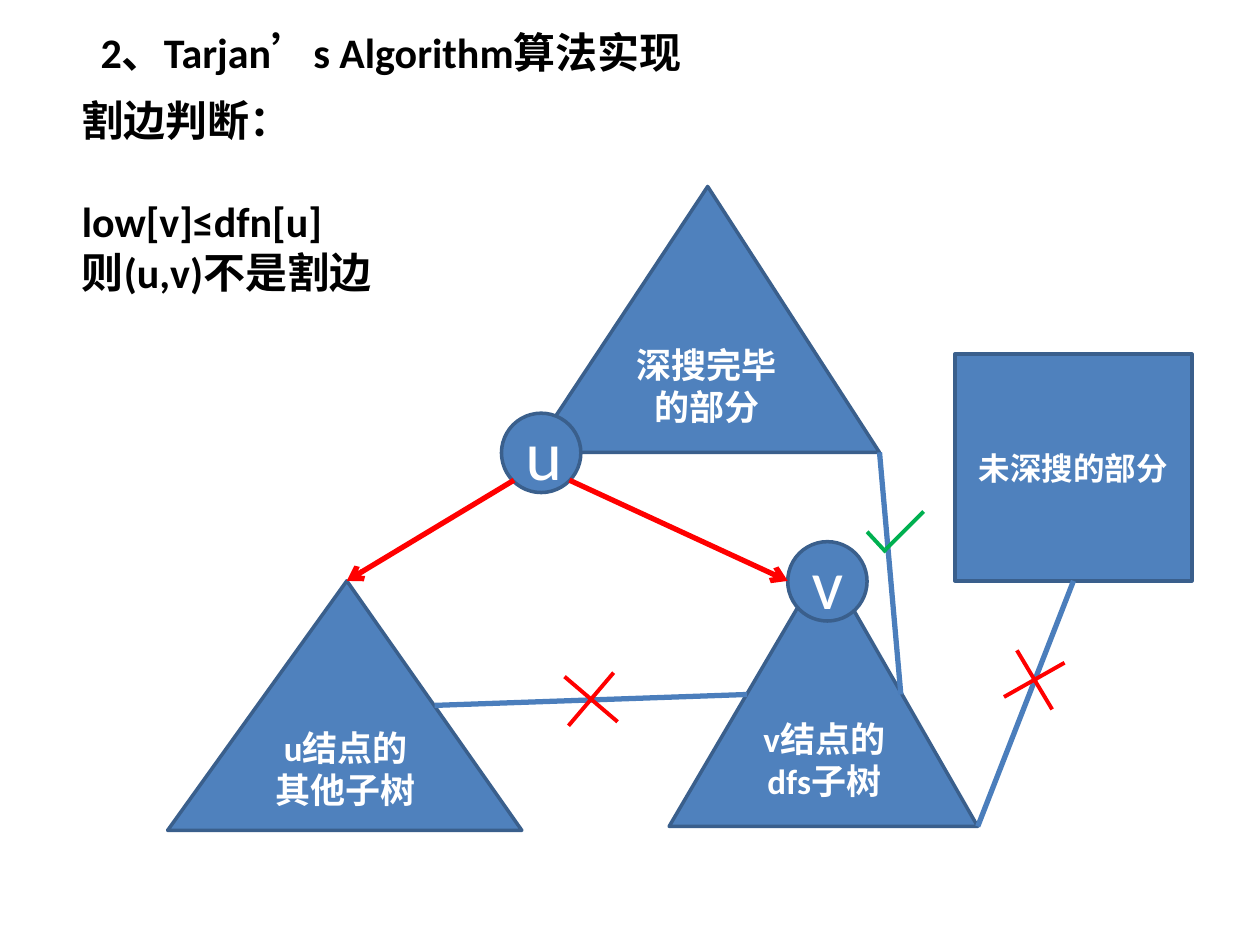
from lxml import etree
from pptx import Presentation
from pptx.dml.color import RGBColor
from pptx.enum.shapes import MSO_CONNECTOR, MSO_SHAPE
from pptx.enum.text import MSO_ANCHOR, PP_ALIGN
from pptx.oxml.ns import qn
from pptx.util import Cm, Pt

TRIANGLE, CIRCLE, SQUARE = MSO_SHAPE.ISOSCELES_TRIANGLE, MSO_SHAPE.OVAL, MSO_SHAPE.RECTANGLE
STRAIGHT = MSO_CONNECTOR.STRAIGHT
CENTER, MIDDLE = PP_ALIGN.CENTER, MSO_ANCHOR.MIDDLE

BLACK = RGBColor(0x00, 0x00, 0x00)
WHITE = RGBColor(0xFF, 0xFF, 0xFF)
BLUE = RGBColor(0x4F, 0x81, 0xBD)
OUTLINE = RGBColor(0x3A, 0x5F, 0x8C)
EDGE_BLUE = RGBColor(0x4B, 0x7E, 0xBC)
RED = RGBColor(0xFF, 0x00, 0x00)
GREEN = RGBColor(0x00, 0xB0, 0x50)


def set_font(paragraph, size, color, bold):
    font = paragraph.font
    font.name, font.size, font.bold = "Calibri", Pt(size), bold
    font.color.rgb = color


def draw_line(shapes, ends, color, width, arrow=False):
    """Draw a shadowless line; ends is (x1, y1, x2, y2) in centimetres."""
    line = shapes.add_connector(STRAIGHT, *[Cm(value) for value in ends])
    line.line.color.rgb = color
    line.line.width = Pt(width)
    if arrow:
        etree.SubElement(line.line._get_or_add_ln(), qn("a:tailEnd"), type="arrow")
    etree.SubElement(line._element.spPr, qn("a:effectLst"))
    return line


prs = Presentation()
prs.slide_width, prs.slide_height = Cm(25.4), Cm(19.05)
slide = prs.slides.add_slide(prs.slide_layouts[6])
shapes = slide.shapes

# Heading and the rule for cut edges
texts = [
    ((1.78, 0.41, 18.06, 1.27), ["2、Tarjan’s Algorithm算法实现"]),
    ((1.4, 1.78, 7.54, 4.37), ["割边判断：", "low[v]≤dfn[u]", "则(u,v)不是割边"]),
]
for box, lines in texts:
    frame = shapes.add_textbox(*[Cm(value) for value in box]).text_frame
    frame.word_wrap = True
    frame.text = "\n".join(lines)
    for paragraph in frame.paragraphs:
        set_font(paragraph, 24, BLACK, True)
    if len(lines) > 1:
        frame.paragraphs[1].space_before = Pt(29)

# Parts of the search tree, from back to front
parts = [
    (TRIANGLE, (10.72, 3.76, 7.01, 5.36), "深搜完毕的部分", 20),
    (TRIANGLE, (13.49, 11.3, 6.22, 5.36), "v结点的dfs子树", 20),
    (TRIANGLE, (3.38, 11.71, 7.14, 5.03), "u结点的其他子树", 20),
    (CIRCLE, (10.11, 8.33, 1.6, 1.6), "u", 40),
    (CIRCLE, (15.88, 10.92, 1.6, 1.6), "v", 40),
    (SQUARE, (19.25, 7.14, 4.78, 4.57), "未深搜的部分", 18),
]
for kind, box, label, size in parts:
    part = shapes.add_shape(kind, *[Cm(value) for value in box])
    part.shadow.inherit = False
    part.fill.solid()
    part.fill.fore_color.rgb = BLUE
    part.line.color.rgb = OUTLINE
    part.line.width = Pt(2)
    if kind == TRIANGLE:
        part.adjustments[0] = 0.506
    frame = part.text_frame
    frame.word_wrap = True
    frame.vertical_anchor = MIDDLE
    frame.text = label
    frame.paragraphs[0].alignment = CENTER
    set_font(frame.paragraphs[0], size, WHITE, kind != CIRCLE)
unsearched = part

# Tree edges from u
for ends in [(11.48, 9.68, 15.88, 11.71), (10.36, 9.68, 6.99, 11.71)]:
    draw_line(shapes, ends, RED, 3, arrow=True)

# Possible edges leaving the subtree of v
draw_line(shapes, (18.16, 14, 17.73, 9.12), EDGE_BLUE, 3)
draw_line(shapes, (15.06, 14, 8.76, 14.22), EDGE_BLUE, 3)
to_unsearched = draw_line(shapes, (19.71, 16.66, 21.64, 11.71), EDGE_BLUE, 3)
to_unsearched.end_connect(unsearched, 2)

# Crosses on the impossible edges, a tick on the possible one
marks = [
    (RED, [(20.5, 13.11, 21.21, 14.3), (20.24, 14.05, 21.46, 13.36)]),
    (RED, [(11.38, 13.64, 12.45, 14.55), (11.46, 14.63, 12.37, 13.56)]),
    (GREEN, [(17.48, 10.72, 17.86, 11.13), (17.86, 11.07, 18.62, 10.31)]),
]
for color, strokes in marks:
    mark = shapes.add_group_shape()
    for ends in strokes:
        draw_line(mark.shapes, ends, color, 2.25)

prs.save("out.pptx")
